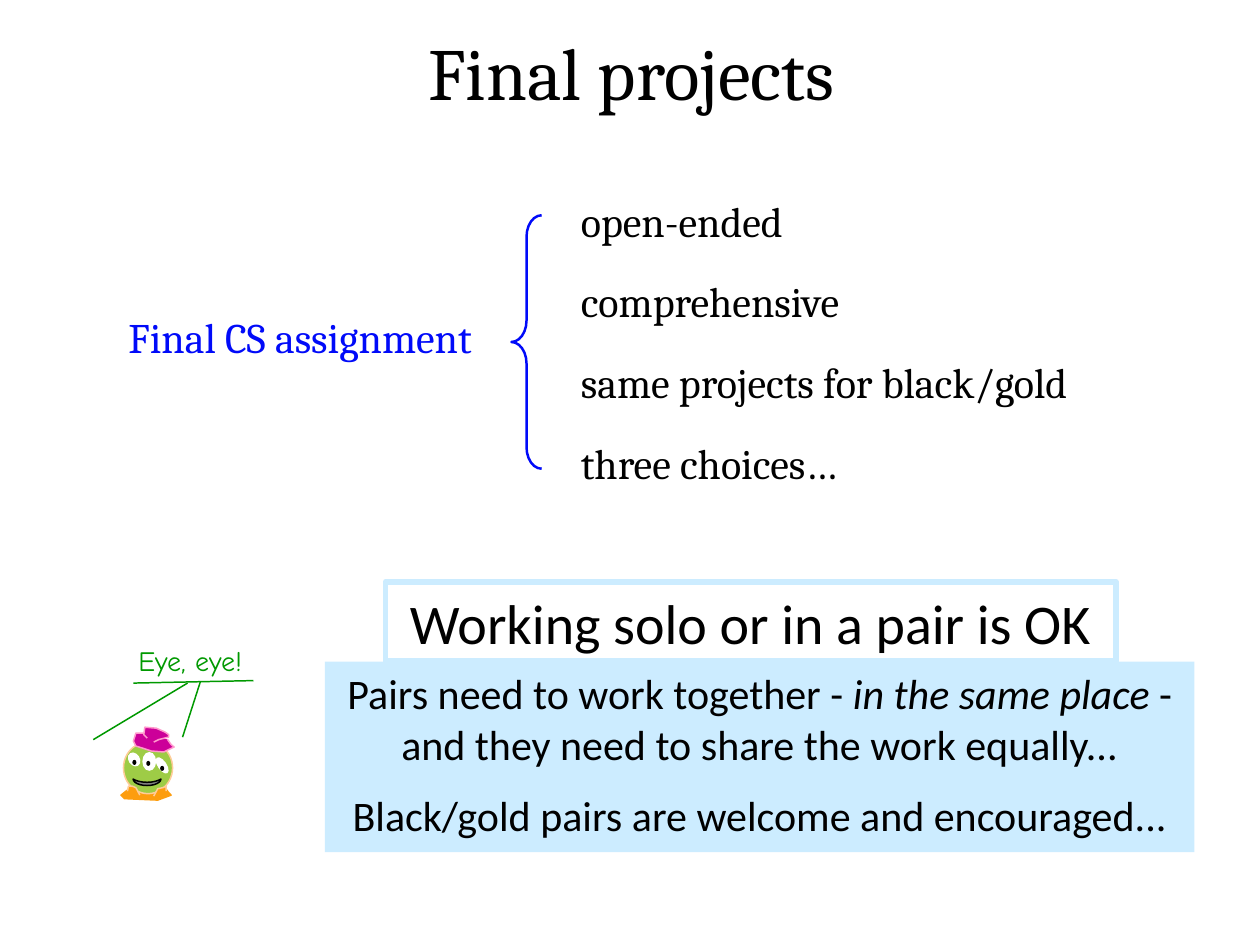
from lxml import etree
from pptx import Presentation
from pptx import util as u
from pptx.dml.color import RGBColor
from pptx.enum import shapes, text
from pptx.oxml.ns import qn

BLACK = RGBColor(0x00, 0x00, 0x00)
WHITE = RGBColor(0xFF, 0xFF, 0xFF)
GRAY = RGBColor(0x80, 0x80, 0x80)
BLUE = RGBColor(0x00, 0x0A, 0xF9)
PALE_BLUE = RGBColor(0xCC, 0xEC, 0xFF)
GREEN = RGBColor(0x00, 0x99, 0x00)
LIME = RGBColor(0x9E, 0xCC, 0x46)
ORANGE = RGBColor(0xFD, 0x9D, 0x0F)
PEACH = RGBColor(0xFF, 0xCC, 0x99)
MAGENTA = RGBColor(0xCC, 0x00, 0x99)
PINK = RGBColor(0xFF, 0x99, 0xCC)

LEFT, CENTER = text.PP_ALIGN.LEFT, text.PP_ALIGN.CENTER
MSO = shapes.MSO_SHAPE


def paint(sp, fill=None, line=None, width=0.03):
    sp.shadow.inherit = False
    for part, color in ((sp.fill, fill), (sp.line.fill, line)):
        if color is None:
            part.background()
        else:
            part.solid()
            part.fore_color.rgb = color
    if line is not None:
        sp.line.width = u.Cm(width)


def write(sp, paragraphs, size, font, color, align=LEFT, wrap=True):
    tf = sp.text_frame
    tf.word_wrap = wrap
    tf.auto_size = text.MSO_AUTO_SIZE.SHAPE_TO_FIT_TEXT
    tf.vertical_anchor = text.MSO_ANCHOR.TOP
    for i, runs in enumerate(paragraphs):
        p = tf.add_paragraph() if i else tf.paragraphs[0]
        p.alignment = align
        p.font.size = u.Pt(size)
        p.font.name = font
        p.font.color.rgb = color
        if i:
            p.space_before = u.Pt(size / 2)
        for words, italic in runs:
            r = p.add_run()
            r.text = words
            if italic:
                r.font.italic = True


prs = Presentation()
prs.slide_width, prs.slide_height = u.Cm(25.4), u.Cm(19.05)
s = prs.slides.add_slide(prs.slide_layouts[6])

labels = [
    ("Final projects", 3.2, 0.43, 19.05, 2.03, 42, "Cambria", BLACK, CENTER, True),
    ("Final CS assignment", 2.34, 6.15, 11, 1.27, 24, "Cambria", BLUE, LEFT, True),
    ("Eye, eye!", 2.54, 12.85, 2.84, 0.94, 16, "Comic Neue", GREEN, LEFT, False),
]
features = ["open-ended", "comprehensive", "same projects for black/gold", "three choices…"]
for i, words in enumerate(features):
    labels.append((words, 11.46, 3.81 + 1.626 * i, 11.63, 1.27, 24, "Cambria", BLACK, LEFT, True))
for words, x, y, w, h, *style in labels:
    sp = s.shapes.add_textbox(u.Cm(x), u.Cm(y), u.Cm(w), u.Cm(h))
    write(sp, [[(words, False)]], *style)

sp = s.shapes.add_shape(MSO.RECTANGLE, u.Cm(7.77), u.Cm(11.73), u.Cm(14.73), u.Cm(1.6))
paint(sp, line=PALE_BLUE, width=0.11)
write(sp, [[("Working solo or in a pair is OK", False)]], 32, "Calibri", BLACK, CENTER)

sp = s.shapes.add_shape(MSO.RECTANGLE, u.Cm(6.55), u.Cm(13.34), u.Cm(17.53), u.Cm(3.84))
paint(sp, PALE_BLUE)
pair_rules = [
    [("Pairs need to work together - ", False), ("in the same place ", True),
     ("- and they need to share the work equally...", False)],
    [("Black/gold pairs are welcome and encouraged...", False)],
]
write(sp, pair_rules, 24, "Calibri", BLACK, CENTER)

sp = s.shapes.add_shape(MSO.LEFT_BRACE, u.Cm(10.31), u.Cm(4.34), u.Cm(0.61), u.Cm(5.11))
sp.adjustments[0] = 0.71
paint(sp, line=BLUE, width=0.05)

feet = [(2.95, 15.8), (3.33, 15.88), (3.4, 15.98), (3.45, 16.03), (3.18, 16.13),
        (2.51, 16.1), (2.44, 16.03), (2.54, 15.95), (2.64, 15.88), (2.82, 15.77)]
hat_brim = [(2.95, 14.78), (2.74, 14.78), (2.69, 14.94), (2.74, 15.04), (2.9, 15.09),
            (3.05, 15.14), (3.3, 15.16), (3.51, 15.06), (3.45, 15.01), (3.38, 14.91)]
hat_top = [(2.97, 14.88), (2.9, 14.81), (2.92, 14.66), (3.15, 14.68), (3.33, 14.76),
           (3.4, 14.81), (3.4, 14.86), (3.2, 14.91), (3.1, 14.96)]
left_toe = [(2.57, 15.95), (2.59, 15.85), (2.67, 15.85), (2.74, 15.88), (2.82, 16.03)]
right_toe = [(3.35, 15.95), (3.35, 15.85), (3.28, 15.88), (3.18, 15.9), (3.1, 16.05)]
face = [
    (MSO.OVAL, 2.49, 14.96, 0.99, 1.04, 0, LIME, PEACH),
    (MSO.OVAL, 2.59, 15.16, 0.23, 0.3, 327.2, WHITE, None),
    (MSO.OVAL, 2.87, 15.16, 0.28, 0.38, 0, WHITE, None),
    (MSO.OVAL, 3.18, 15.24, 0.18, 0.38, 325.5, WHITE, None),
    (MSO.OVAL, 2.67, 15.32, 0.08, 0.1, 0, BLACK, None),
    (MSO.OVAL, 2.95, 15.34, 0.08, 0.1, 0, BLACK, None),
    (MSO.OVAL, 3.23, 15.44, 0.08, 0.1, 0, BLACK, None),
    (MSO.MOON, 2.9, 15.49, 0.13, 0.56, 270, GRAY, BLACK),
]
outlines = [
    (feet, True, ORANGE, ORANGE),
    (hat_brim, False, MAGENTA, PINK),
    (hat_top, False, MAGENTA, PINK),
    (left_toe, False, ORANGE, PEACH),
    (right_toe, False, ORANGE, PEACH),
]
alien = s.shapes.add_group_shape()
for i, (points, close, fill, line) in enumerate(outlines):
    corners = [(u.Cm(x), u.Cm(y)) for x, y in points]
    builder = alien.shapes.build_freeform(*corners[0])
    builder.add_line_segments(corners[1:], close=close)
    paint(builder.convert_to_shape(), fill, line)
    if i == 0:
        for kind, x, y, w, h, angle, tint, edge in face:
            sp = alien.shapes.add_shape(kind, u.Cm(x), u.Cm(y), u.Cm(w), u.Cm(h))
            sp.rotation = angle
            paint(sp, tint, edge)

speech_lines = [
    (3.68, 14.86, 4.04, 13.74),
    (1.88, 14.91, 3.78, 13.77),
    (2.69, 13.77, 5.11, 13.72),
]
for ends in speech_lines:
    line = s.shapes.add_connector(shapes.MSO_CONNECTOR.STRAIGHT, *[u.Cm(v) for v in ends])
    line.line.color.rgb = GREEN
    line.line.width = u.Cm(0.03)
    etree.SubElement(line._element.spPr, qn("a:effectLst"))

prs.save("out.pptx")
